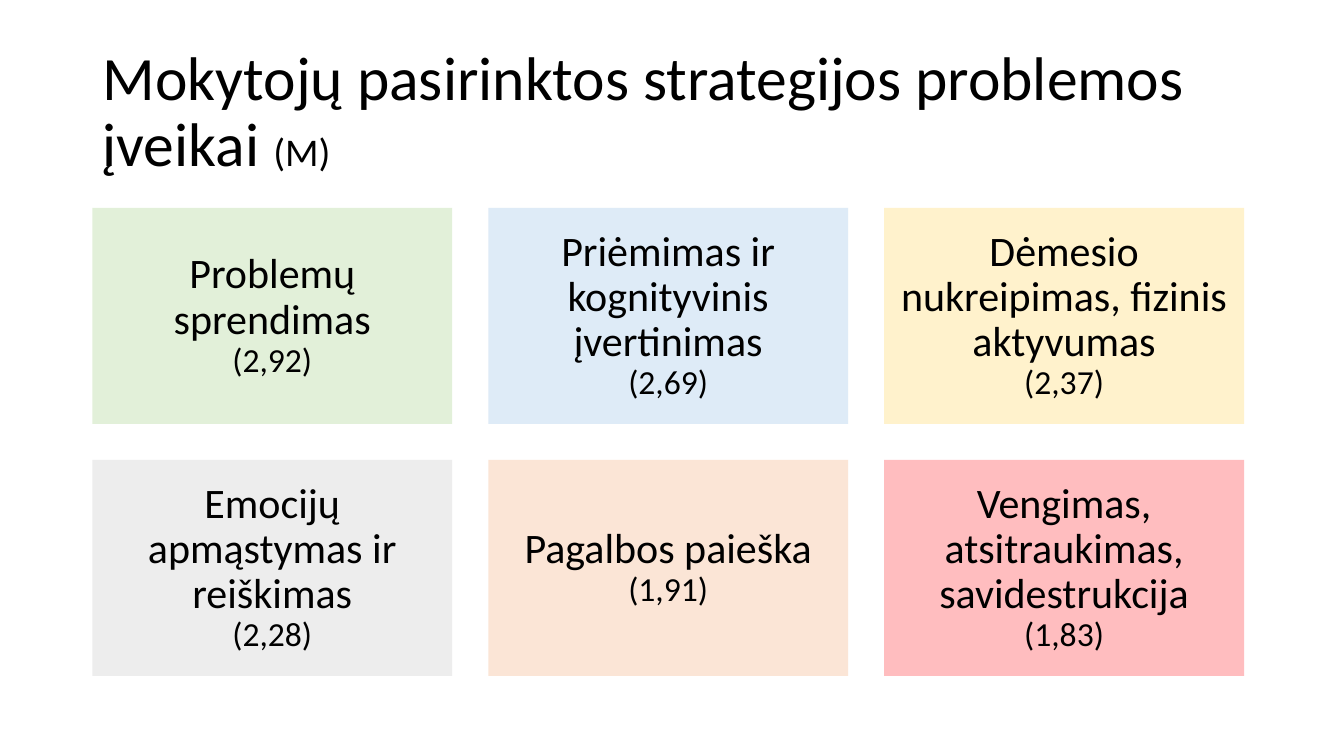
from pptx import Presentation
from pptx.dml.color import RGBColor
from pptx.enum import shapes, text
from pptx.oxml.ns import qn
from pptx.util import Pt
from lxml import etree

BLACK = RGBColor(0, 0, 0)
GREEN = RGBColor(0xE2, 0xF0, 0xD9)
BLUE = RGBColor(0xDE, 0xEB, 0xF7)
YELLOW = RGBColor(0xFF, 0xF2, 0xCC)
GREY = RGBColor(0xED, 0xED, 0xED)
ORANGE = RGBColor(0xFB, 0xE5, 0xD6)
RED = RGBColor(0xFF, 0x7C, 0x80)

LEFT, TOP = 66, 148.5
WIDTH, HEIGHT = 257.1, 154.3
GAP = 25.7
COLS = 3

CARDS = [
    ("Problemų sprendimas", "(2,92)", GREEN),
    ("Priėmimas ir kognityvinis įvertinimas", "(2,69)", BLUE),
    ("Dėmesio nukreipimas, fizinis aktyvumas", "(2,37)", YELLOW),
    ("Emocijų apmąstymas ir reiškimas", "(2,28)", GREY),
    ("Pagalbos paieška", "(1,91)", ORANGE),
    ("Vengimas, atsitraukimas, savidestrukcija", "(1,83)", RED),
]


def style(para, sizes, align):
    para.alignment = align
    para.line_spacing = 0.9
    for run, size in zip(para.runs, sizes):
        run.font.size = Pt(size)
        run.font.name = "Calibri"
        run.font.color.rgb = BLACK


def set_alpha(shape, percent):
    color = shape.fill._xPr.find(qn("a:solidFill"))[0]
    etree.SubElement(color, qn("a:alpha")).set("val", str(percent * 1000))


def add_title(slide):
    title = slide.shapes.title
    title.left, title.top = Pt(LEFT), Pt(28.75)
    title.width, title.height = Pt(790), Pt(104.4)
    frame = title.text_frame
    frame.word_wrap = True
    frame.auto_size = text.MSO_AUTO_SIZE.NONE
    frame.vertical_anchor = text.MSO_ANCHOR.MIDDLE
    para = frame.paragraphs[0]
    para.text = "Mokytojų pasirinktos strategijos problemos įveikai "
    para.add_run().text = "(M)"
    style(para, (44, 28), text.PP_ALIGN.LEFT)


def add_card(slide, index, label, mean, color):
    row, col = divmod(index, COLS)
    card = slide.shapes.add_shape(
        shapes.MSO_SHAPE.RECTANGLE,
        Pt(LEFT + col * (WIDTH + GAP)), Pt(TOP + row * (HEIGHT + GAP)),
        Pt(WIDTH), Pt(HEIGHT))
    card.shadow.inherit = False
    card.fill.solid()
    card.fill.fore_color.rgb = color
    card.line.fill.background()
    frame = card.text_frame
    frame.word_wrap = True
    frame.vertical_anchor = text.MSO_ANCHOR.MIDDLE
    frame.margin_left = frame.margin_right = Pt(9)
    frame.margin_top = frame.margin_bottom = Pt(9)
    para = frame.paragraphs[0]
    para.text = f"{label}\v{mean}"
    style(para, (30, 24), text.PP_ALIGN.CENTER)
    return card


def main():
    deck = Presentation()
    deck.slide_width, deck.slide_height = Pt(960), Pt(540)
    slide = deck.slides.add_slide(deck.slide_layouts.get_by_name("Title Only"))
    add_title(slide)
    for index, (label, mean, color) in enumerate(CARDS):
        card = add_card(slide, index, label, mean, color)
        if color == RED:
            set_alpha(card, 50)
    deck.save("out.pptx")


if __name__ == "__main__":
    main()
